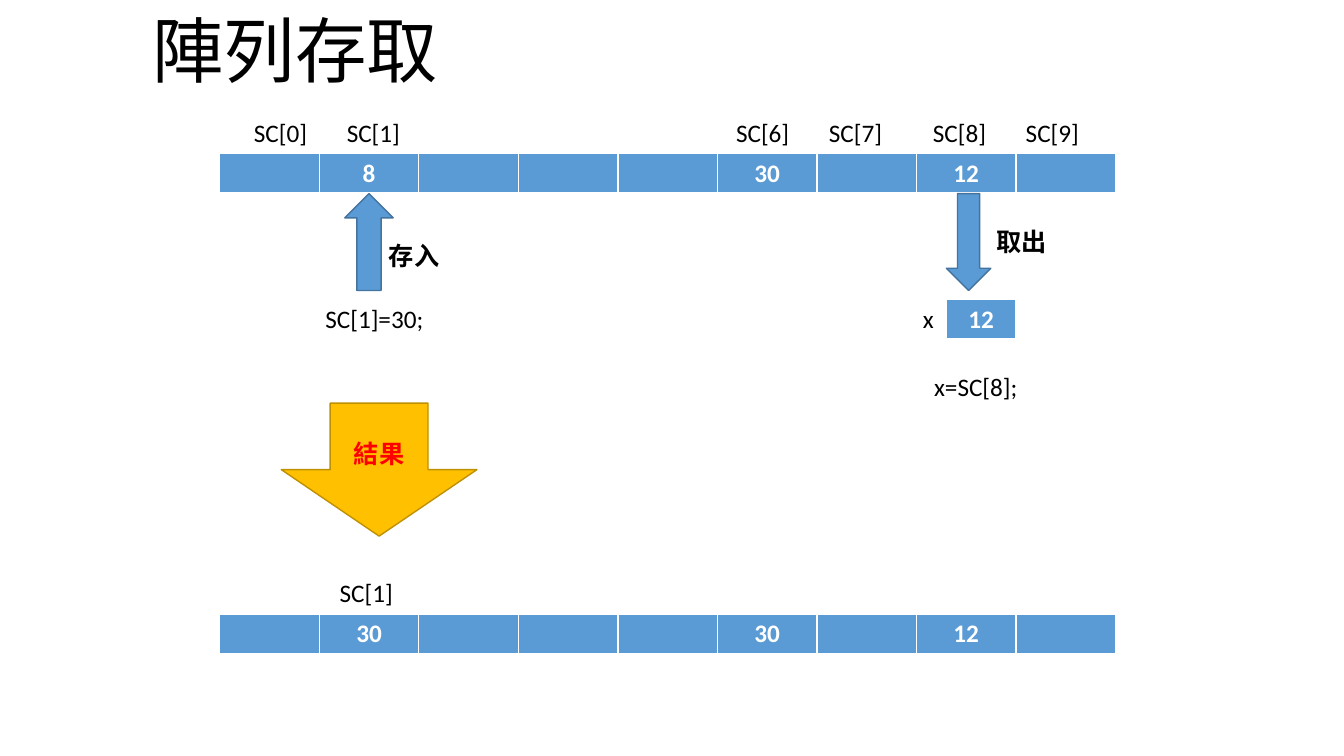
import pptx
import pptx.dml.color
import pptx.enum.shapes
import pptx.enum.text
import pptx.oxml
import pptx.oxml.ns
import pptx.util
import lxml.etree

Cm = pptx.util.Cm
Pt = pptx.util.Pt
qn = pptx.oxml.ns.qn
ARROW = pptx.enum.shapes.MSO_SHAPE
ALIGN = pptx.enum.text.PP_ALIGN
ANCHOR = pptx.enum.text.MSO_ANCHOR
COLORS = {"blue": "5B9BD5", "blue_edge": "43739E", "gold": "FFC000",
          "gold_edge": "BF9000", "red": "FF0000", "black": "000000", "white": "FFFFFF"}
LATIN, CHINESE = "Calibri", "Noto Sans CJK SC"


def color(name):
    return pptx.dml.color.RGBColor.from_string(COLORS[name])


class ArraySlide:
    """Draws array rows, labels and arrows on one slide in a shared style."""

    def __init__(self, deck):
        self.page = deck.slides.add_slide(deck.slide_layouts[6])

    def add_span(self, para, text, ink="black", bold=False, size=18, font=LATIN):
        span = para.add_run()
        span.text = text
        span.font.size = Pt(size)
        span.font.bold = bold
        span.font.name = font
        span.font.color.rgb = color(ink)
        east = lxml.etree.SubElement(span.font._element, qn("a:ea"))
        east.set("typeface", CHINESE)

    def text(self, left, top, width, text, height=1.02, **style):
        box = self.page.shapes.add_textbox(Cm(left), Cm(top), Cm(width), Cm(height))
        box.text_frame.word_wrap = True
        para = box.text_frame.paragraphs[0]
        self.add_span(para, text, **style)
        return box

    def title(self, left, top, width, height, text):
        box = self.text(left, top, width, text, height, size=51)
        box.text_frame.vertical_anchor = ANCHOR.BOTTOM
        para = box.text_frame.paragraphs[0]
        para.alignment = ALIGN.CENTER
        para.line_spacing = 0.7

    def tabbed(self, left, top, width, labels, stops):
        box = self.text(left, top, width, "\t".join(labels))
        para = box.text_frame.paragraphs[0]
        tabs = lxml.etree.SubElement(para._p.get_or_add_pPr(), qn("a:tabLst"))
        for stop in stops:
            lxml.etree.SubElement(tabs, qn("a:tab"), pos=str(Cm(stop)), algn="l")

    def arrow(self, kind, left, top, width, height, fill, edge, text=""):
        shape = self.page.shapes.add_shape(kind, Cm(left), Cm(top), Cm(width), Cm(height))
        shape.shadow.inherit = False
        shape.fill.solid()
        shape.fill.fore_color.rgb = color(fill)
        shape.line.color.rgb = color(edge)
        shape.line.width = Pt(1)
        if text:
            shape.text_frame.vertical_anchor = ANCHOR.MIDDLE
            para = shape.text_frame.paragraphs[0]
            para.alignment = ALIGN.CENTER
            self.add_span(para, text, "red", True)

    def border(self, cell, side, width):
        line = lxml.etree.SubElement(cell._tc.get_or_add_tcPr(), qn("a:ln" + side),
                                     w=str(Pt(width)))
        fill = lxml.etree.SubElement(line, qn("a:solidFill"))
        lxml.etree.SubElement(fill, qn("a:srgbClr"), val=COLORS["white"])

    def array(self, left, top, width, values, count, height=1.03):
        frame = self.page.shapes.add_table(1, count, Cm(left), Cm(top), Cm(width), Cm(height))
        for index, cell in enumerate(frame.table.iter_cells()):
            for side, weight in (("L", 1), ("R", 1), ("T", 1), ("B", 3)):
                self.border(cell, side, weight)
            cell.fill.solid()
            cell.fill.fore_color.rgb = color("blue")
            if index in values:
                para = cell.text_frame.paragraphs[0]
                para.alignment = ALIGN.CENTER
                self.add_span(para, values[index], "white", True)


def main():
    deck = pptx.Presentation()
    deck.slide_width, deck.slide_height = Cm(33.87), Cm(19.05)
    slide = ArraySlide(deck)

    slide.array(5.54, 3.86, 22.58, {1: "8", 5: "30", 7: "12"}, 9)
    slide.tabbed(6.15, 2.82, 21.97, [f"SC[{index}]" for index in (0, 1, 6, 7, 8, 9)],
                 (2.34, 12.15, 14.49, 17.11, 19.45))

    slide.arrow(ARROW.UP_ARROW, 8.69, 4.88, 1.22, 2.44, "blue", "blue_edge")
    slide.text(9.55, 5.92, 1.8, "存入", bold=True, font=CHINESE)
    slide.text(7.95, 7.52, 3.91, "SC[1]=30;")

    slide.arrow(ARROW.DOWN_ARROW, 23.85, 4.88, 1.12, 2.44, "blue", "blue_edge")
    slide.text(24.87, 5.59, 2.13, "取出", bold=True, font=CHINESE)
    slide.array(23.85, 7.54, 1.75, {0: "12"}, 1, 1.02)
    slide.text(23.01, 7.52, 1.73, "x")
    slide.text(23.29, 9.22, 3.33, "x=SC[8];")

    slide.arrow(ARROW.DOWN_ARROW, 7.09, 10.16, 4.93, 3.35, "gold", "gold_edge", "結果")
    slide.array(5.54, 15.47, 22.58, {1: "30", 5: "30", 7: "12"}, 9)
    slide.text(8.31, 14.43, 1.98, "SC[1]")
    slide.title(1.63, 0.58, 11.63, 1.8, "陣列存取")
    deck.save("out.pptx")


if __name__ == "__main__":
    main()
